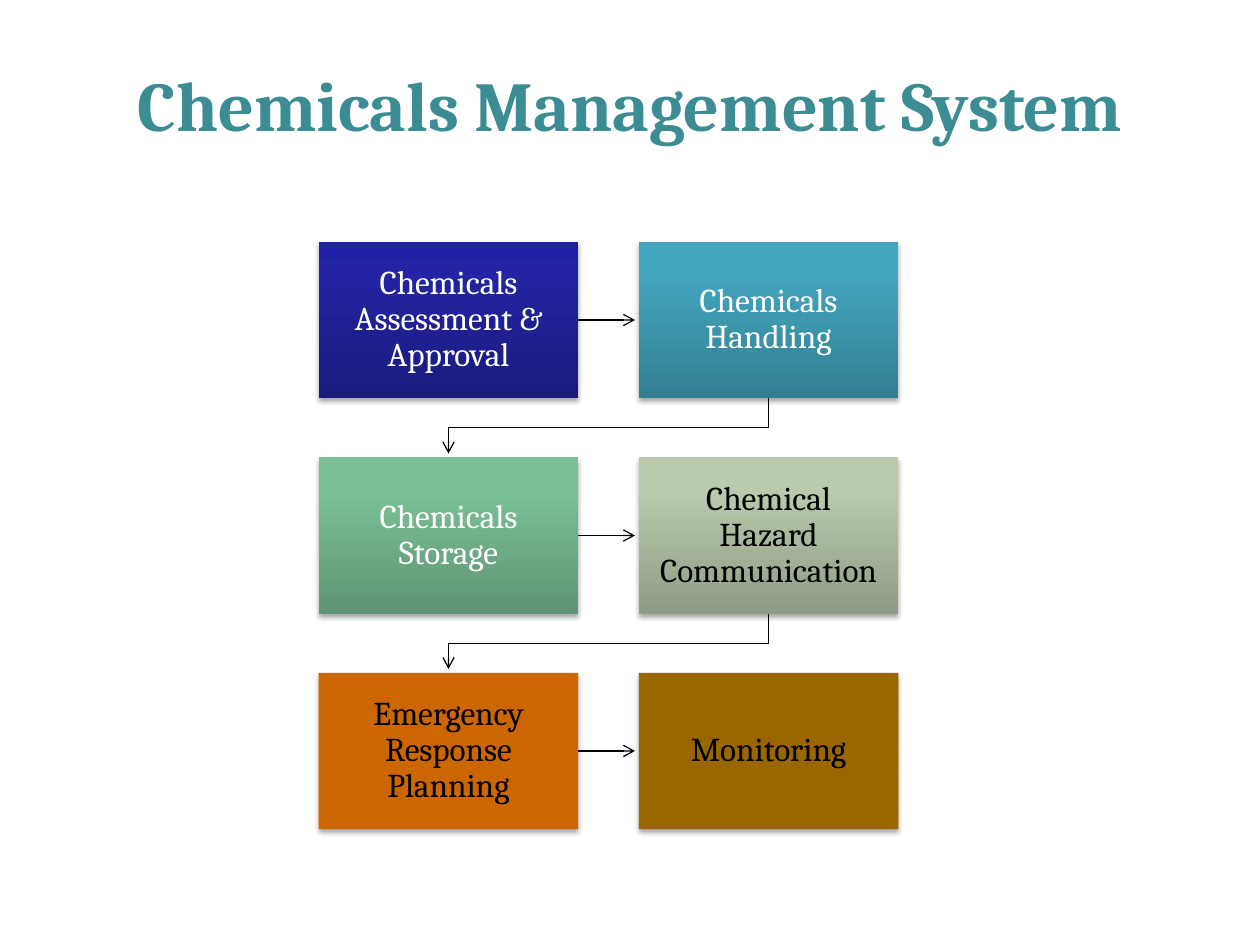
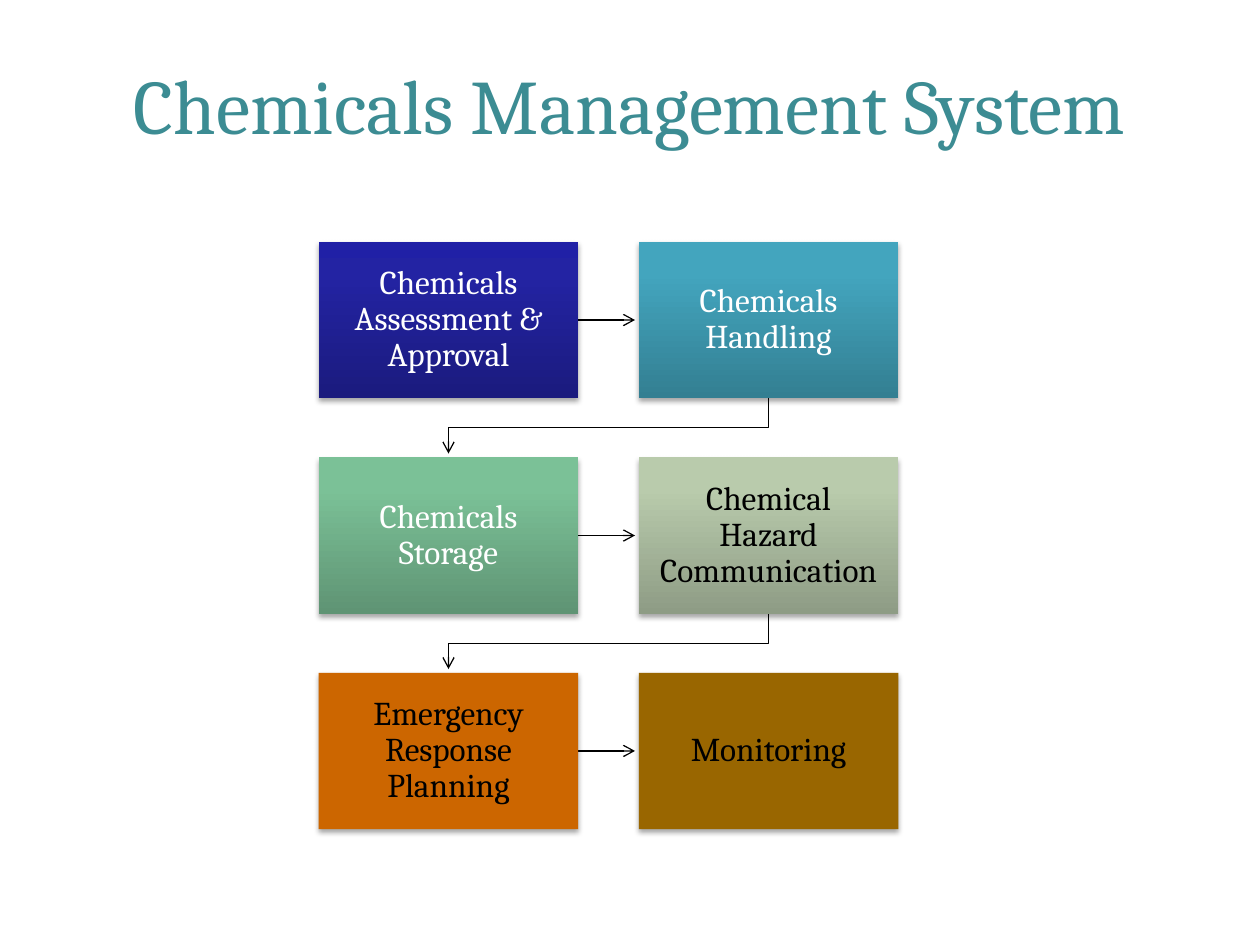
"""Build two slides that show the chemicals management system as a flow of six steps."""
from lxml import etree
from pptx import Presentation
from pptx.dml.color import RGBColor
from pptx.enum.shapes import MSO_CONNECTOR, MSO_SHAPE
from pptx.enum.text import MSO_ANCHOR, MSO_AUTO_SIZE, PP_ALIGN
from pptx.oxml import parse_xml
from pptx.oxml.ns import nsdecls, qn
from pptx.util import Inches, Pt

RECT, STRAIGHT = MSO_SHAPE.RECTANGLE, MSO_CONNECTOR.STRAIGHT
CENTER, MIDDLE, NO_FIT = PP_ALIGN.CENTER, MSO_ANCHOR.MIDDLE, MSO_AUTO_SIZE.NONE

FONT, TEAL, BLACK, WHITE = "Cambria", "3C8C93", "000000", "FFFFFF"
TITLE = "Chemicals Management System"
TITLE_STYLES = [(40, True), (44, False)]
STEPS = [
    ("Chemicals Assessment & Approval", WHITE, ["1B1B7E", "2323A3", "2020A6"]),
    ("Chemicals Handling", WHITE, ["337F92", "43A5BE", "41A8C1"]),
    ("Chemicals Storage", WHITE, ["5F9474", "7BC197", "7BC398"]),
    ("Chemical Hazard Communication", BLACK, ["8E9C85", "B9CBAC", "B9CDAD"]),
    ("Emergency Response Planning", BLACK, ["CC6600"]),
    ("Monitoring", BLACK, ["996600"]),
]
STOPS = [0, 80, 100]
COLS = 2
LEFT, TOP = Inches(2.53), Inches(1.92)
BOX_W, BOX_H = Inches(2.06), Inches(1.24)
COL_STEP, ROW_STEP = Inches(2.54), Inches(1.71)
INSET, TIP_GAP = Inches(0.15), Inches(0.03)

SHADOW = (
    f'<a:outerShdw {nsdecls("a")} blurRad="{Pt(3.1)}" dist="{Pt(1.8)}" dir="5400000" rotWithShape="0">'
    '<a:srgbClr val="000000"><a:alpha val="35000"/></a:srgbClr></a:outerShdw>'
)


def add_run(p, text, size, color, bold=False):
    """Add one styled run to a centred paragraph."""
    p.alignment = CENTER
    r = p.add_run()
    r.text = text
    r.font.name, r.font.size, r.font.bold = FONT, Pt(size), bold
    r.font.color.rgb = RGBColor.from_string(color)


def style_arrow(sp):
    """Give a line its black stroke, an open arrowhead and no shadow."""
    sp.line.color.rgb = RGBColor.from_string(BLACK)
    sp.line.width = Pt(0.75)
    ln = sp.line._get_or_add_ln()
    etree.SubElement(ln, qn("a:tailEnd"), type="arrow")
    etree.SubElement(ln.getparent(), qn("a:effectLst"))


prs = Presentation()
prs.slide_width, prs.slide_height = Inches(10), Inches(7.5)

for title_size, title_bold in TITLE_STYLES:
    s = prs.slides.add_slide(prs.slide_layouts[5])
    title = s.shapes.title
    title.left, title.top = Inches(0.75), Inches(0.33)
    title.width, title.height = Inches(8.5), Inches(0.98)
    tf = title.text_frame
    tf.auto_size, tf.vertical_anchor = NO_FIT, MIDDLE
    add_run(tf.paragraphs[0], TITLE, title_size, TEAL, title_bold)

    for i, (text, color, fills) in enumerate(STEPS):
        row, col = divmod(i, COLS)
        x, y = LEFT + col * COL_STEP, TOP + row * ROW_STEP
        mid_x, mid_y = x + BOX_W // 2, y + BOX_H // 2

        if col < COLS - 1:
            style_arrow(s.shapes.add_connector(
                STRAIGHT, x + BOX_W, mid_y, x + COL_STEP - TIP_GAP, mid_y))
        elif i < len(STEPS) - 1:
            first_x = LEFT + BOX_W // 2
            bottom, next_top = y + BOX_H, y + ROW_STEP
            turn_y = (bottom + next_top) // 2
            fb = s.shapes.build_freeform(mid_x, bottom)
            fb.add_line_segments(
                [(mid_x, turn_y), (first_x, turn_y), (first_x, next_top - TIP_GAP)], close=False)
            sp = fb.convert_to_shape()
            sp.fill.background()
            style_arrow(sp)

        sp = s.shapes.add_shape(RECT, x, y, BOX_W, BOX_H)
        sp.line.fill.background()
        if len(fills) == 1:
            sp.fill.solid()
            sp.fill.fore_color.rgb = RGBColor.from_string(fills[0])
        else:
            sp.fill.gradient()
            sp.fill.gradient_angle = 90
            gs_list = sp._element.spPr.find(qn("a:gradFill")).find(qn("a:gsLst"))
            for gs in list(gs_list):
                gs_list.remove(gs)
            for pos, fill in zip(STOPS, fills):
                gs = etree.SubElement(gs_list, qn("a:gs"), pos=str(pos * 1000))
                etree.SubElement(gs, qn("a:srgbClr"), val=fill)
        sp.shadow.inherit = False
        sp._element.spPr.find(qn("a:effectLst")).append(parse_xml(SHADOW))

        tf = sp.text_frame
        tf.word_wrap, tf.vertical_anchor = True, MIDDLE
        tf.margin_left = tf.margin_right = tf.margin_top = tf.margin_bottom = INSET
        p = tf.paragraphs[0]
        p.line_spacing = 0.9
        add_run(p, text, 19, color)

prs.save("out.pptx")
